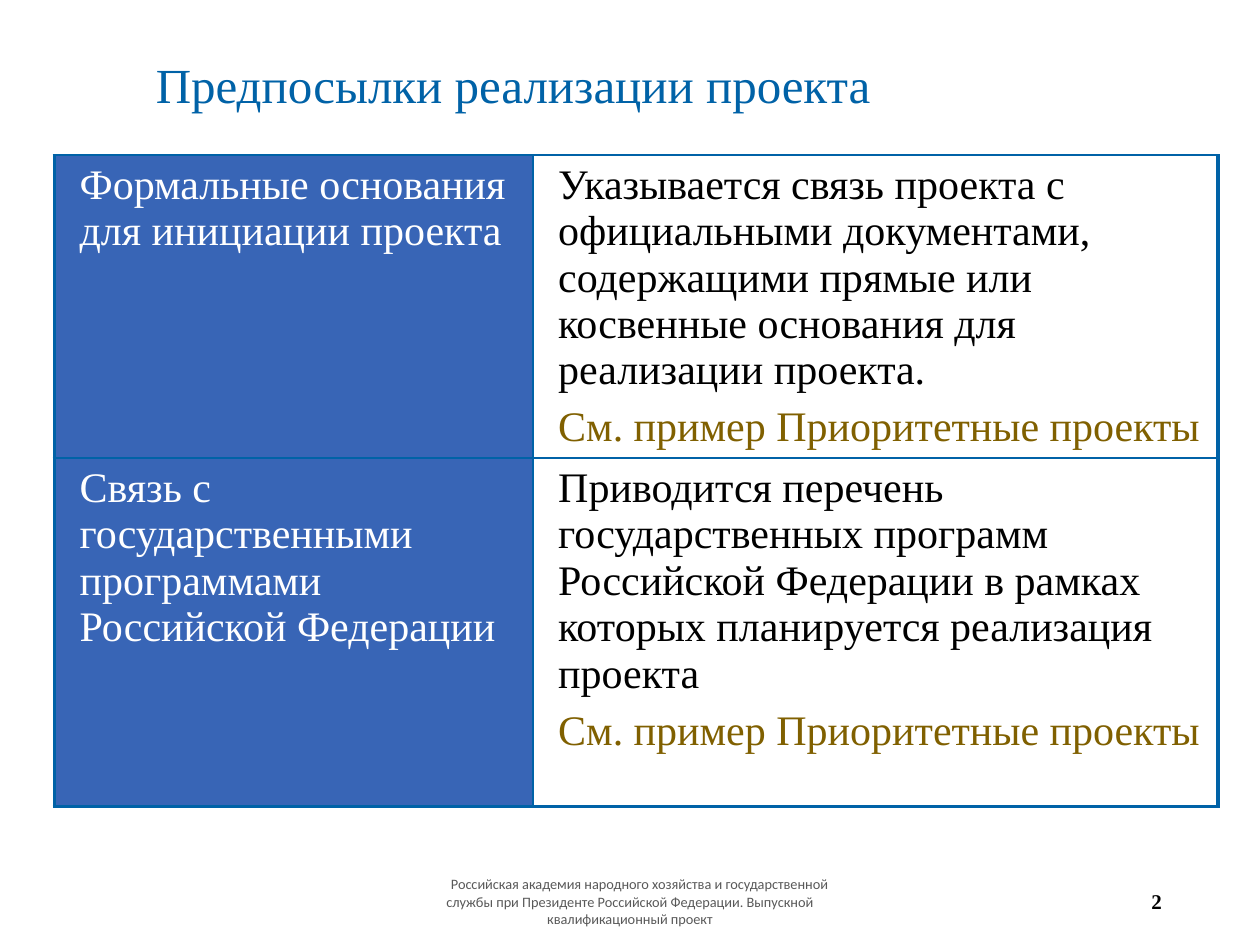
from dataclasses import dataclass

import pptx
import pptx.dml.color
import pptx.enum.text
import pptx.oxml
import pptx.oxml.ns
import pptx.util

Pt = pptx.util.Pt
ALIGN = pptx.enum.text.PP_ALIGN
ANCHOR = pptx.enum.text.MSO_ANCHOR

HUES = {
    "blue": "0062A7",
    "label": "3865B6",
    "white": "FFFFFF",
    "black": "000000",
    "gold": "806000",
    "grey": "595959",
}
SERIF = "Times New Roman"
HINT = "См. пример Приоритетные проекты"
THIN, THICK = 1, 2.25


@dataclass
class Style:
    size: float
    hue: str
    font: str = SERIF
    bold: bool = False


@dataclass
class Label:
    text: str
    left: float
    top: float
    width: float
    height: float
    style: Style
    align: ALIGN
    anchor: ANCHOR
    indent: float = 0
    line: float = 1


@dataclass
class Row:
    name: str
    body: str
    height: float


LABELS = [
    Label("Российская академия народного хозяйства и государственной службы "
          "при Президенте Российской Федерации. Выпускной квалификационный проект",
          238.5, 500.5, 243, 29, Style(8.2, "grey", "Calibri"),
          ALIGN.CENTER, ANCHOR.MIDDLE, indent=11),
    Label("2", 509, 500.5, 162, 29, Style(12, "black", bold=True),
          ALIGN.RIGHT, ANCHOR.MIDDLE),
    Label("Предпосылки реализации проекта", 61, 30, 549, 39,
          Style(28, "blue"), ALIGN.LEFT, ANCHOR.BOTTOM, indent=21, line=0.9),
]

ROWS = [
    Row("Формальные основания для инициации проекта",
        "Указывается связь проекта с официальными документами, содержащими "
        "прямые или косвенные основания для реализации проекта.", 173),
    Row("Связь с государственными программами Российской Федерации",
        "Приводится перечень государственных программ Российской Федерации "
        "в рамках которых планируется реализация проекта", 199),
]
WIDTHS = [273.5, 391.5]


def tint(hue: str) -> pptx.dml.color.RGBColor:
    return pptx.dml.color.RGBColor.from_string(HUES[hue])


def dress(para, style: Style) -> None:
    for run in para.runs:
        run.font.name = style.font
        run.font.size = Pt(style.size)
        run.font.bold = style.bold
        run.font.color.rgb = tint(style.hue)


def add_label(slide, label: Label) -> None:
    box = slide.shapes.add_textbox(
        Pt(label.left), Pt(label.top), Pt(label.width), Pt(label.height))
    frame = box.text_frame
    frame.word_wrap = True
    frame.vertical_anchor = label.anchor
    frame.text = label.text
    para = frame.paragraphs[0]
    para.alignment = label.align
    para.line_spacing = label.line
    para._p.get_or_add_pPr().set("indent", str(Pt(label.indent)))
    dress(para, label.style)


def add_edge(cell, side: str, width: float) -> None:
    space = pptx.oxml.ns.nsdecls("a")
    edge = pptx.oxml.parse_xml(
        f'<a:ln{side} {space} w="{Pt(width)}"><a:solidFill>'
        f'<a:srgbClr val="{HUES["blue"]}"/></a:solidFill></a:ln{side}>')
    cell._tc.get_or_add_tcPr().append(edge)


def fill_cell(cell, parts: list[tuple[str, str]], back: str,
              edges: dict[str, float]) -> None:
    cell.margin_left = cell.margin_right = Pt(8)
    cell.margin_top = cell.margin_bottom = Pt(4)
    cell.text_frame.text = "\n".join(text for text, hue in parts)
    for para, (text, hue) in zip(cell.text_frame.paragraphs, parts):
        para.space_before = Pt(6)
        props = para._p.get_or_add_pPr()
        props.set("marL", str(Pt(6.5)))
        props.set("indent", "0")
        dress(para, Style(24, hue))
    for side, width in edges.items():
        add_edge(cell, side, width)
    cell.fill.solid()
    cell.fill.fore_color.rgb = tint(back)


def add_grid(slide, rows: list[Row]) -> None:
    shape = slide.shapes.add_table(
        len(rows), len(WIDTHS), Pt(31), Pt(88.5),
        Pt(sum(WIDTHS)), Pt(sum(row.height for row in rows)))
    table = shape.table
    table.first_row = table.horz_banding = False
    for col, width in zip(table.columns, WIDTHS):
        col.width = Pt(width)
    for num, row in enumerate(rows):
        table.rows[num].height = Pt(row.height)
        base = THICK if num == len(rows) - 1 else THIN
        fill_cell(table.cell(num, 0), [(row.name, "white")], "label",
                  {"L": THICK, "R": THIN, "T": THIN, "B": base})
        fill_cell(table.cell(num, 1), [(row.body, "black"), (HINT, "gold")],
                  "white", {"L": THIN, "R": THICK, "T": THIN, "B": base})


def main() -> None:
    deck = pptx.Presentation()
    deck.slide_width, deck.slide_height = Pt(720), Pt(540)
    slide = deck.slides.add_slide(deck.slide_layouts[6])
    add_grid(slide, ROWS)
    for label in LABELS:
        add_label(slide, label)
    deck.save("out.pptx")


if __name__ == "__main__":
    main()
